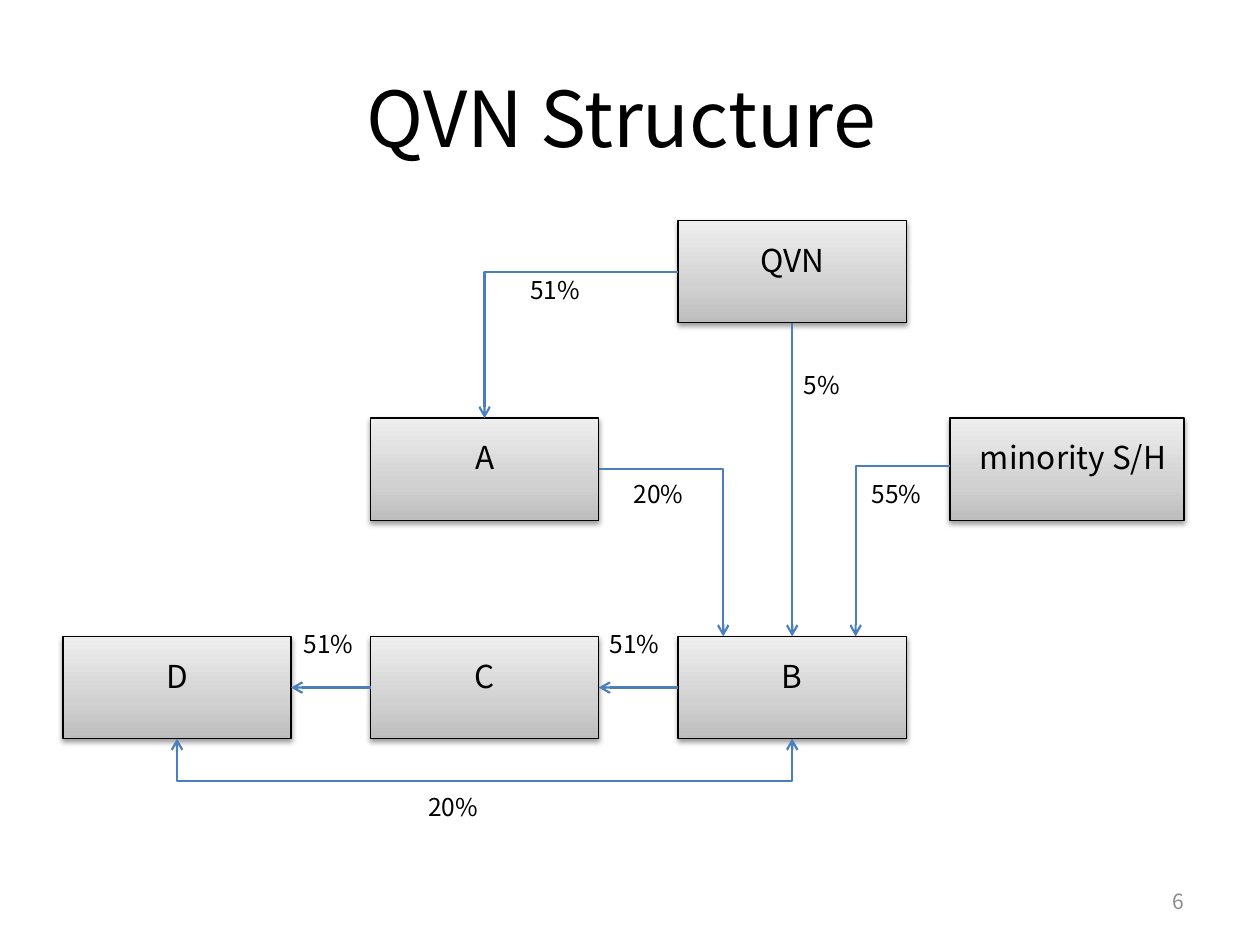
from copy import deepcopy

from lxml import etree
from pptx import Presentation
from pptx.dml.color import RGBColor
from pptx.enum.shapes import MSO_CONNECTOR, MSO_SHAPE
from pptx.enum.text import MSO_ANCHOR, PP_ALIGN
from pptx.oxml.ns import qn
from pptx.util import Cm, Pt

STRAIGHT, ELBOW = MSO_CONNECTOR.STRAIGHT, MSO_CONNECTOR.ELBOW
RECTANGLE = MSO_SHAPE.RECTANGLE
TOP, MIDDLE = MSO_ANCHOR.TOP, MSO_ANCHOR.MIDDLE
LEFT, CENTER, RIGHT = PP_ALIGN.LEFT, PP_ALIGN.CENTER, PP_ALIGN.RIGHT
SIDE_TOP, SIDE_LEFT, SIDE_BOTTOM, SIDE_RIGHT = range(4)

FONT = "Noto Sans CJK KR"
BLACK, GREY, BLUE = "000000", "8C8C8C", "4B7EBC"
GRADIENT = [(0, "BDBDBD"), (0.35, "D1D1D1"), (1, "EEEEEE")]

COLUMNS = [1.27 + 6.2 * number for number in range(3)]
ROWS = [4.45, 8.43, 12.83]
BOX_WIDTH, BOX_HEIGHT = 4.6, 2.06
MINORITY_LEFT, MINORITY_WIDTH = 19.15, 4.72
LOOP_DEPTH = 0.86

HOLDING = "QVN"
COMPANIES = {
    HOLDING: (COLUMNS[2], ROWS[0]),
    "A": (COLUMNS[1], ROWS[1]),
    "D": (COLUMNS[0], ROWS[2]),
    "C": (COLUMNS[1], ROWS[2]),
    "B": (COLUMNS[2], ROWS[2]),
}
STRAIGHT_HOLDINGS = [
    (HOLDING, SIDE_BOTTOM, "B", SIDE_TOP),
    ("B", SIDE_LEFT, "C", SIDE_RIGHT),
    ("C", SIDE_LEFT, "D", SIDE_RIGHT),
]
ELBOW_HOLDINGS = [
    (COLUMNS[2], ROWS[0] + BOX_HEIGHT / 2, COLUMNS[1] + BOX_WIDTH / 2, ROWS[1]),
    (COLUMNS[1] + BOX_WIDTH, ROWS[1] + BOX_HEIGHT / 2, 14.58, ROWS[2]),
    (MINORITY_LEFT, 9.4, 17.25, ROWS[2]),
]
PERCENTAGES = [
    ("51%", 10.44, 5.41),
    ("5%", 15.95, 7.34),
    ("55%", 17.32, 9.53),
    ("20%", 12.52, 9.53),
    ("51%", 12.04, 12.55),
    ("51%", 5.87, 12.55),
    ("20%", 8.38, 15.85),
]


def color(value):
    """Turn a hex string into a colour."""
    return RGBColor.from_string(value)


def set_values(target, values):
    """Set each attribute of the target from a dict."""
    for name, value in values.items():
        setattr(target, name, value)


def write(shape, text, size, align, anchor, ink=BLACK, **frame_values):
    """Write one formatted paragraph into a shape."""
    frame = shape.text_frame
    set_values(frame, {"word_wrap": True, "vertical_anchor": anchor, **frame_values})
    para = frame.paragraphs[0]
    para.alignment = align
    span = para.add_run()
    span.text = text
    set_values(span.font, {"name": FONT, "size": Pt(size)})
    span.font.color.rgb = color(ink)


def add_label(page, text, place, size, align, anchor, ink=BLACK):
    """Add a text box at a place given in centimetres."""
    label = page.shapes.add_textbox(*map(Cm, place))
    write(label, text, size, align, anchor, ink)


def fill_gradient(shape):
    """Fill a shape with the grey gradient, darkest at the bottom."""
    shape.fill.gradient()
    shape.fill.gradient_angle = 90
    stop_list = shape._element.spPr.find(qn("a:gradFill")).find(qn("a:gsLst"))
    stop_list.append(deepcopy(stop_list[0]))
    for stop, (position, shade) in zip(shape.fill.gradient_stops, GRADIENT):
        stop.position = position
        stop.color.rgb = color(shade)


def add_shadow(shape):
    """Give a shape a soft shadow below it."""
    shape.shadow.inherit = False
    effects = shape._element.spPr.find(qn("a:effectLst"))
    shadow = etree.SubElement(
        effects, qn("a:outerShdw"),
        blurRad=str(Pt(3.1)), dist=str(Pt(1.6)), dir="5400000", rotWithShape="0")
    ink = etree.SubElement(shadow, qn("a:srgbClr"), val=BLACK)
    etree.SubElement(ink, qn("a:alpha"), val="38000")


def add_company(page, name, left, top, width=BOX_WIDTH, left_inset=0.25):
    """Add a company box with its name."""
    box = page.shapes.add_shape(
        RECTANGLE, Cm(left), Cm(top), Cm(width), Cm(BOX_HEIGHT))
    fill_gradient(box)
    box.line.color.rgb = color(BLACK)
    box.line.width = Pt(0.75)
    add_shadow(box)
    write(box, name, 18, CENTER, TOP, margin_top=Cm(0.41), margin_left=Cm(left_inset))
    return box


def style_arrow(arrow, ends=("a:tailEnd",)):
    """Format a line with open arrowheads and no shadow."""
    arrow.line.color.rgb = color(BLUE)
    arrow.line.width = Pt(1.25)
    properties = arrow._element.spPr
    for end in ends:
        etree.SubElement(properties.find(qn("a:ln")), qn(end), type="arrow")
    etree.SubElement(properties, qn("a:effectLst"))


def add_straight_arrow(page, owner, owner_side, held, held_side):
    """Join two boxes with a straight arrow."""
    arrow = page.shapes.add_connector(STRAIGHT, 0, 0, 0, 0)
    arrow.begin_connect(owner, owner_side)
    arrow.end_connect(held, held_side)
    style_arrow(arrow)


def add_elbow_arrow(page, points):
    """Add an arrow that runs sideways and then down."""
    arrow = page.shapes.add_connector(ELBOW, *map(Cm, points))
    arrow._element.spPr.find(qn("a:prstGeom")).set("prst", "bentConnector2")
    style_arrow(arrow)


def add_loop_arrow(page, start, end, bottom):
    """Add a two-headed arrow that runs below two boxes."""
    first, *others = [
        (Cm(x), Cm(y)) for x, y in
        (start, (start[0], bottom), (end[0], bottom), end)]
    builder = page.shapes.build_freeform(*first)
    builder.add_line_segments(others, close=False)
    arrow = builder.convert_to_shape()
    arrow.fill.background()
    style_arrow(arrow, ("a:headEnd", "a:tailEnd"))


def add_title(page, text):
    """Place and fill the title."""
    title = page.shapes.title
    places = {"left": 1.27, "top": 0.76, "width": 22.86, "height": 3.18}
    set_values(title, {name: Cm(value) for name, value in places.items()})
    write(title, text, 44, CENTER, MIDDLE)


def main():
    """Build the ownership chart and save it."""
    deck = Presentation()
    set_values(deck, {"slide_width": Cm(25.4), "slide_height": Cm(19.05)})
    page = deck.slides.add_slide(deck.slide_layouts[5])
    add_title(page, f"{HOLDING} Structure ")
    add_label(page, "6", (18.21, 17.65, 5.92, 1.02), 12, RIGHT, MIDDLE, GREY)
    boxes = {
        name: add_company(page, name, *place) for name, place in COMPANIES.items()}
    add_company(page, "minority S/H", MINORITY_LEFT, ROWS[1], MINORITY_WIDTH, 0.5)
    for owner, owner_side, held, held_side in STRAIGHT_HOLDINGS:
        add_straight_arrow(page, boxes[owner], owner_side, boxes[held], held_side)
    for points in ELBOW_HOLDINGS:
        add_elbow_arrow(page, points)
    bottom = ROWS[2] + BOX_HEIGHT
    loop_start, loop_end = [
        (COLUMNS[number] + BOX_WIDTH / 2, bottom) for number in (0, 2)]
    add_loop_arrow(page, loop_start, loop_end, bottom + LOOP_DEPTH)
    for text, left, top in PERCENTAGES:
        add_label(page, text, (left, top, 1.83, 1.17), 14, LEFT, TOP)
    deck.save("out.pptx")


if __name__ == "__main__":
    main()
